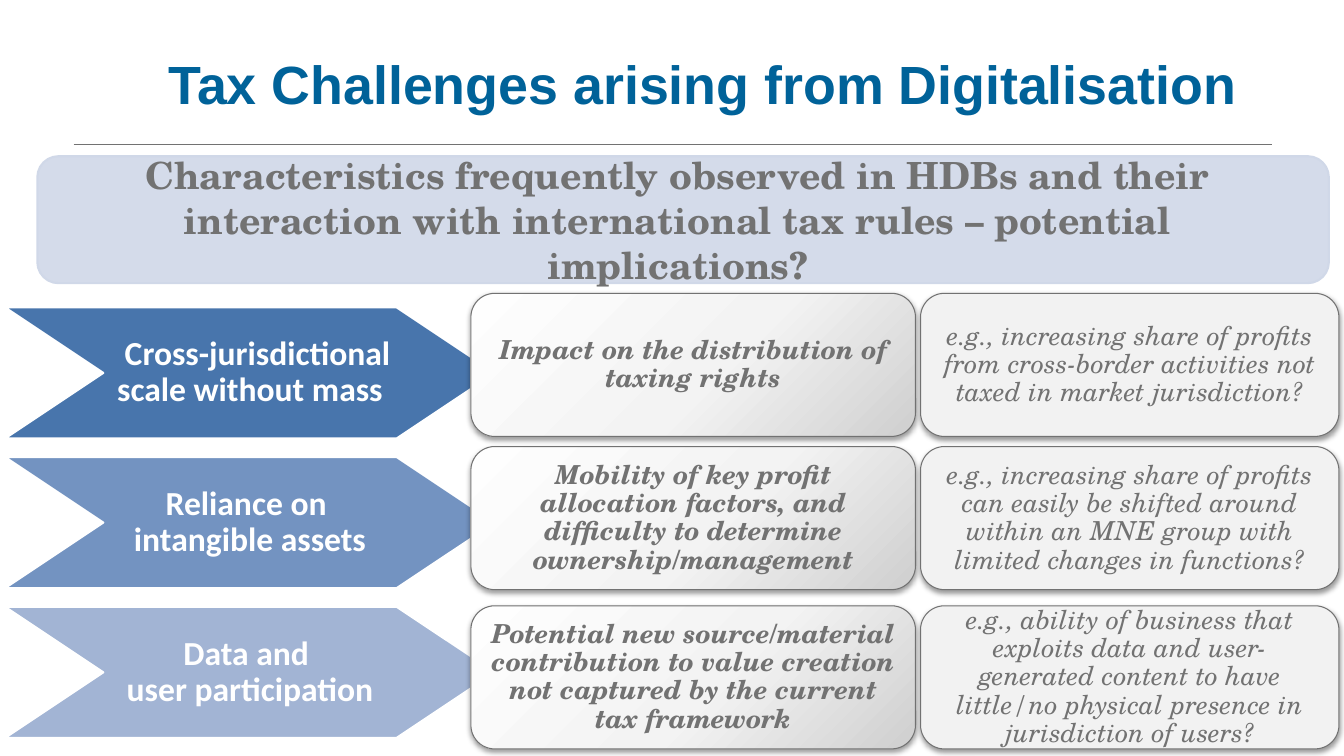
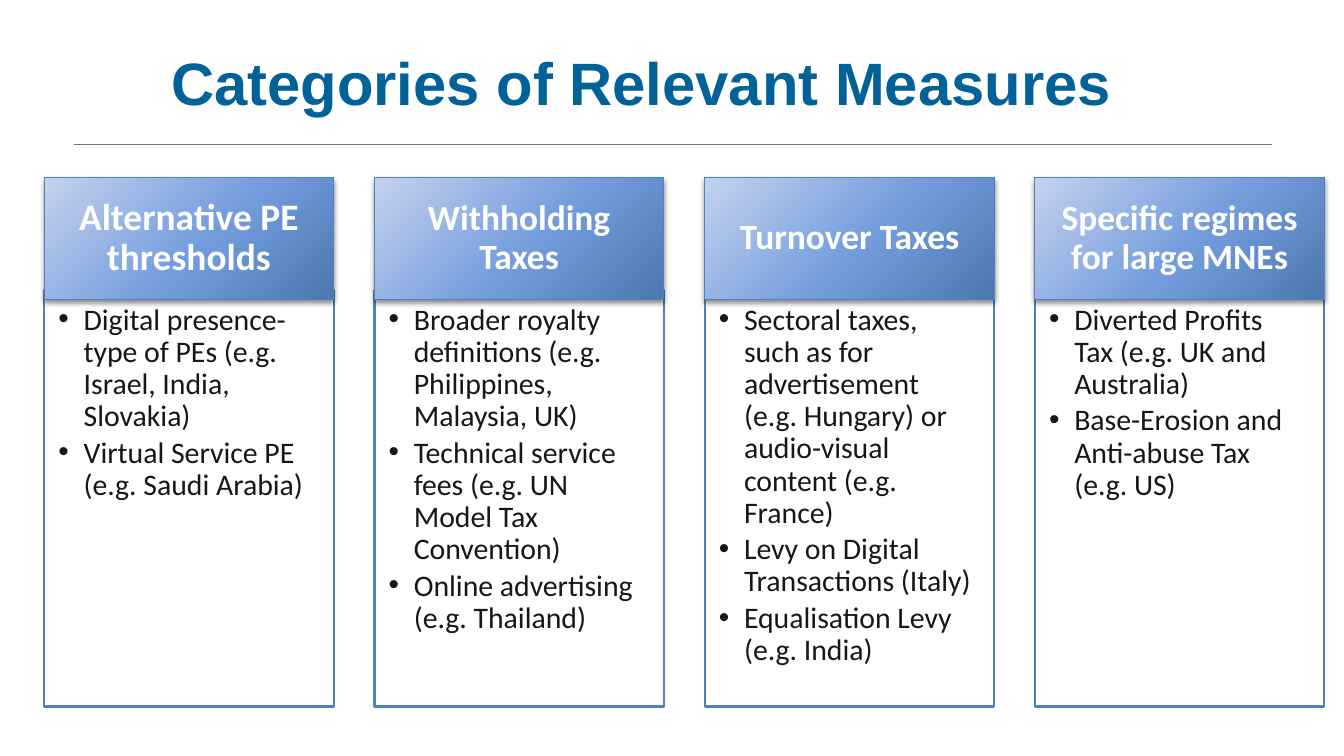
from lxml import etree
from pptx import Presentation
from pptx import util as u
from pptx.dml.color import RGBColor
from pptx.enum import shapes, text
from pptx.oxml import parse_xml
from pptx.oxml.ns import nsdecls, qn

COLORS = {
    "title": "006299", "grey": "727272", "band": "D0D8E8", "white": "FFFFFF",
    "card": "F2F2F2", "outline": "4F81BD", "body": "171717", "shadow": "000000",
}
ARROW_FILLS = ["4875AC", "7393C1", "A2B4D4"]
SILVER = ["FEFEFE", "F3F3F3", "CFCFCF"]
BLUE = ["C4D2EE", "739CDD", "4A78B0"]
SERIF, SANS, TITLE_FONT = "TeX Gyre Schola", "Calibri", "Arial"
RECT = shapes.MSO_SHAPE.RECTANGLE
ROUND = shapes.MSO_SHAPE.ROUNDED_RECTANGLE
CHEVRON = shapes.MSO_SHAPE.CHEVRON
LEFT, CENTER = text.PP_ALIGN.LEFT, text.PP_ALIGN.CENTER


def add_panel(s, kind, box, fill, line, width, shadow=0):
    """Add a shape; a list as fill makes a radial gradient, shadow is its opacity in %."""
    sp = s.shapes.add_shape(kind, *map(u.Inches, box))
    if isinstance(fill, list):
        stops = "".join(f'<a:gs pos="{pos}"><a:srgbClr val="{c}"/></a:gs>'
                        for pos, c in zip((0, 55000, 100000), fill))
        sp.fill.gradient()
        old = sp.element.spPr.find(qn("a:gradFill"))
        sp.element.spPr.replace(old, parse_xml(
            f'<a:gradFill {nsdecls("a")} rotWithShape="1"><a:gsLst>{stops}</a:gsLst>'
            '<a:path path="circle"><a:fillToRect l="-40000" t="-90000" r="140000" b="190000"/>'
            '</a:path></a:gradFill>'))
    else:
        sp.fill.solid()
        sp.fill.fore_color.rgb = RGBColor.from_string(fill)
    sp.line.color.rgb = RGBColor.from_string(line)
    sp.line.width = u.Pt(width)
    sp.shadow.inherit = False
    if shadow:
        sp.element.spPr.find(qn("a:effectLst")).append(parse_xml(
            f'<a:outerShdw {nsdecls("a")} blurRad="{u.Pt(4)}" dist="{u.Pt(2)}" dir="5400000" '
            f'rotWithShape="0"><a:srgbClr val="{COLORS["shadow"]}">'
            f'<a:alpha val="{shadow * 1000}"/></a:srgbClr></a:outerShdw>'))
    return sp


def add_text(sp, lines, font, size, color, bold=False, italic=False, align=CENTER,
             anchor=text.MSO_ANCHOR.MIDDLE, insets=(0.1, 0.05, 0.1, 0.05),
             spacing=0.9, bullets=False):
    tf = sp.text_frame
    tf.word_wrap = True
    tf.vertical_anchor = anchor
    tf.margin_left, tf.margin_top, tf.margin_right, tf.margin_bottom = map(u.Inches, insets)
    for i, line in enumerate(lines):
        p = tf.paragraphs[0] if i == 0 else tf.add_paragraph()
        p.alignment = align
        p.line_spacing = spacing
        if bullets:
            p.space_after = u.Pt(3)
            pPr = p._p.get_or_add_pPr()
            pPr.set("marL", str(u.Inches(0.25)))
            pPr.set("indent", str(u.Inches(-0.25)))
            etree.SubElement(pPr, qn("a:buFont"), typeface="Arial")
            etree.SubElement(pPr, qn("a:buChar"), char="•")
        r = p.add_run()
        r.text = line
        r.font.name, r.font.size = font, u.Pt(size)
        r.font.bold, r.font.italic = bold, italic
        r.font.color.rgb = RGBColor.from_string(color)


prs = Presentation()
prs.slide_width, prs.slide_height = u.Inches(13.33), u.Inches(7.5)

# Title and rule on both slides
titles = [
    ("Tax Challenges arising from Digitalisation", 38.4, (1.57, 0.26, 11.2, 1.12)),
    ("Categories of Relevant Measures", 42.7, (1.6, 0.18, 11.48, 1.25)),
]
slides = []
for title, size, box in titles:
    s = prs.slides.add_slide(prs.slide_layouts[6])
    rule = s.shapes.add_connector(shapes.MSO_CONNECTOR.STRAIGHT, u.Inches(0.73),
                                  u.Inches(1.43), u.Inches(12.62), u.Inches(1.43))
    rule.line.color.rgb = RGBColor.from_string(COLORS["grey"])
    rule.line.width = u.Pt(0.5)
    etree.SubElement(rule.element.spPr, qn("a:effectLst"))
    add_text(s.shapes.add_textbox(*map(u.Inches, box)), [title], TITLE_FONT, size,
             COLORS["title"], bold=True, align=LEFT, spacing=1.0)
    slides.append(s)

# Slide 1: question band
s = slides[0]
band = add_panel(s, ROUND, (0.37, 1.55, 12.81, 1.26), COLORS["band"], COLORS["band"], 1.5)
band_color = band.element.spPr.find(qn("a:solidFill"))[0]
etree.SubElement(band_color, qn("a:alpha"), val="90000")
add_text(band, ["Characteristics frequently observed in HDBs and their interaction with "
                "international tax rules – potential implications?"],
         SERIF, 26.7, COLORS["grey"], bold=True, insets=(0.08, 0.14, 0.18, 0.14), spacing=1.0)

# Slide 1: characteristic, impact and example in each row
rows = [
    (2.91, ["Cross-jurisdictional scale without mass"],
     "Impact on the distribution of taxing rights",
     "e.g., increasing share of profits from cross-border activities not taxed in "
     "market jurisdiction?"),
    (4.43, ["Reliance on ", "intangible assets"],
     "Mobility of key profit allocation factors, and difficulty to determine "
     "ownership/management",
     "e.g., increasing share of profits can easily be shifted around within an MNE group "
     "with limited changes in functions?"),
    (6.01, ["Data and ", "user participation"],
     "Potential new source/material contribution to value creation not captured by the "
     "current tax framework",
     "e.g., ability of business that exploits data and user-generated content to have "
     "little/no physical presence in jurisdiction of users?"),
]
for i, (top, feature, impact, example) in enumerate(rows):
    arrow = add_panel(s, CHEVRON, (0.05, 3.05 + i * 1.485, 4.86, 1.3), ARROW_FILLS[i],
                      COLORS["white"], 1.5)
    arrow.adjustments[0] = 0.75
    add_text(arrow, feature, SANS, 24, COLORS["white"], bold=True, insets=(0, 0, 0, 0))
    if len(feature) == 1:
        arrow.text_frame.paragraphs[0]._p.get_or_add_pPr().set("indent", str(u.Inches(0.15)))
    for left, width, fill, line, bold in [(4.67, 4.41, SILVER, impact, True),
                                          (9.13, 4.15, COLORS["card"], example, False)]:
        card = add_panel(s, ROUND, (left, top, width, 1.42), fill, COLORS["grey"], 0.75, 40)
        add_text(card, [line], SERIF, 18.7, COLORS["grey"], bold=bold, italic=True)

# Slide 2: one column per category
s = slides[1]
categories = [
    ("Alternative PE thresholds", 26.7,
     ["Digital presence-type of PEs (e.g. Israel, India, Slovakia)",
      "Virtual Service PE (e.g. Saudi Arabia)"]),
    ("Withholding Taxes", 25.3,
     ["Broader royalty definitions (e.g. Philippines, Malaysia, UK)",
      "Technical service fees (e.g. UN Model Tax Convention)",
      "Online advertising (e.g. Thailand)"]),
    ("Turnover Taxes", 25.3,
     ["Sectoral taxes, such as for advertisement (e.g. Hungary) or audio-visual content "
      "(e.g. France)",
      "Levy on Digital Transactions (Italy)",
      "Equalisation Levy (e.g. India)"]),
    ("Specific regimes for large MNEs", 25.3,
     ["Diverted Profits Tax (e.g. UK and Australia)",
      "Base-Erosion and Anti-abuse Tax (e.g. US)"]),
]
for i, (heading, size, measures) in enumerate(categories):
    left = 0.44 + i * 3.275
    body = add_panel(s, RECT, (left, 2.88, 2.87, 4.13), COLORS["white"], COLORS["outline"], 1.5)
    add_text(body, measures, SANS, 21.3, COLORS["body"], align=LEFT,
             anchor=text.MSO_ANCHOR.TOP, insets=(0.14, 0.14, 0.19, 0.21), bullets=True)
    header = add_panel(s, RECT, (left, 1.76, 2.87, 1.21), BLUE, COLORS["outline"], 0.75, 45)
    add_text(header, [heading], SANS, size, COLORS["white"], bold=True,
             insets=(0.2, 0.11, 0.2, 0.11))

prs.save("out.pptx")
